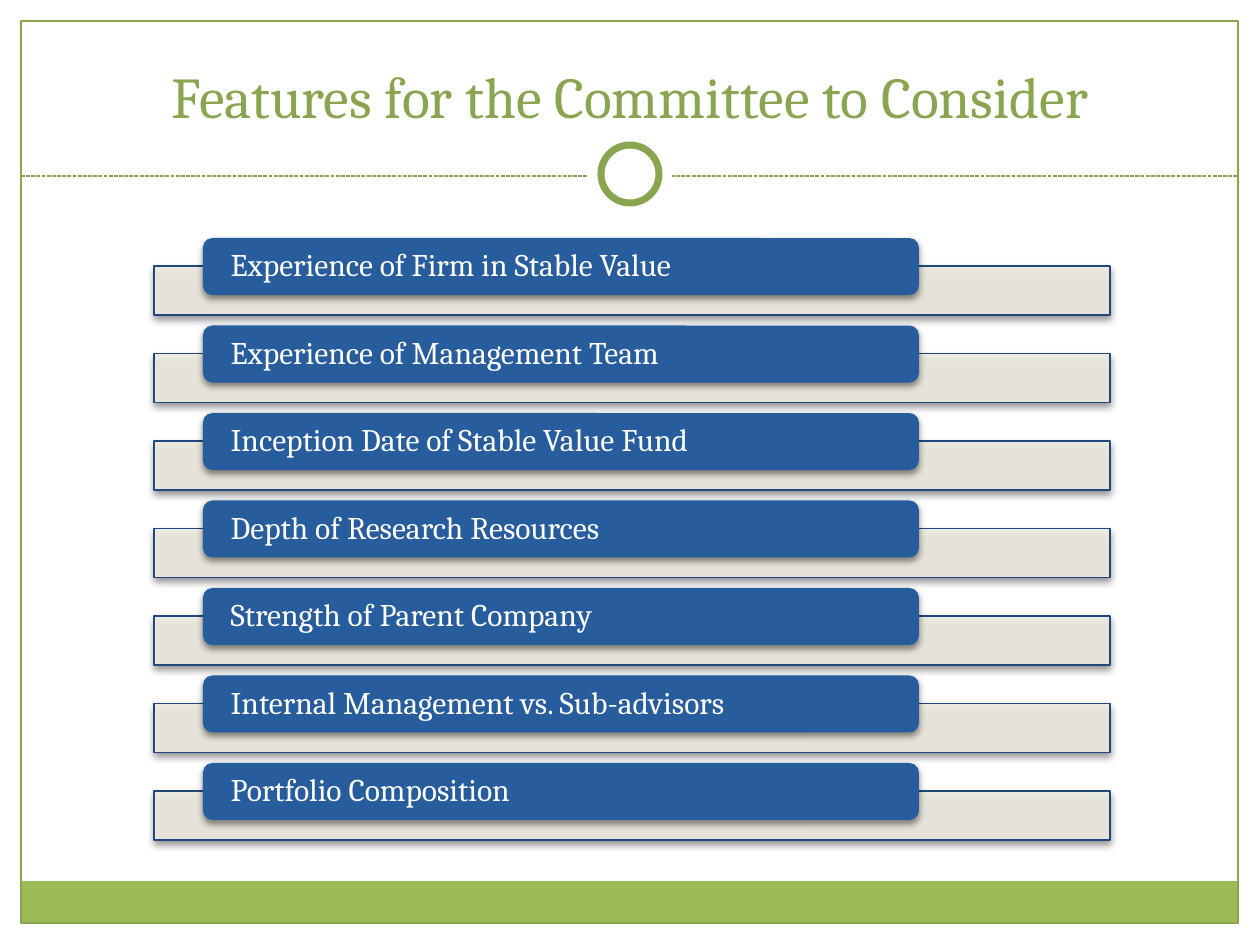
from lxml import etree
from pptx import Presentation, util as u
from pptx.dml.color import RGBColor
from pptx.enum import dml, shapes, text
from pptx.oxml import ns

TITLE = "Features for the Committee to Consider"
FEATURES = [
    "Experience of Firm in Stable Value",
    "Experience of Management Team",
    "Inception Date of Stable Value Fund",
    "Depth of Research Resources",
    "Strength of Parent Company",
    "Internal Management vs. Sub-advisors",
    "Portfolio Composition",
]
COLORS = {
    "white": "FFFFFF", "green": "9BBB59", "dark_green": "89A54F",
    "beige": "EEECE1", "navy": "1F497D", "blue": "275C9D", "black": "000000",
}
FONT = "Cambria"
WIDTH, HEIGHT = 1260, 945
FIRST_TOP, LAST_TOP = 238, 763
BAR_DROP = 28  # each bar starts this far below the top of its label


def px(value):
    return u.Emu(round(value * 914400 / 126))


def color(name):
    return RGBColor.from_string(COLORS[name])


def add_child(parent, tag, **attributes):
    return etree.SubElement(parent, ns.qn(tag), attributes)


def add_box(kind, box, fill=None, line=None, line_width=0.75):
    shape = slide.shapes.add_shape(kind, *map(px, box))
    shape.shadow.inherit = False
    if fill:
        shape.fill.solid()
        shape.fill.fore_color.rgb = color(fill)
    else:
        shape.fill.background()
    if line:
        shape.line.color.rgb = color(line)
        shape.line.width = u.Pt(line_width)
    else:
        shape.line.fill.background()
    return shape


def add_shadow(shape):
    effects = shape._element.spPr.find(ns.qn("a:effectLst"))
    shadow = add_child(effects, "a:outerShdw", blurRad=str(u.Pt(4)), dist=str(u.Pt(2)),
                       dir="5400000", rotWithShape="0")
    shade = add_child(shadow, "a:srgbClr", val=COLORS["black"])
    add_child(shade, "a:alpha", val="45000")


def write(shape, words, size, color_name, align, anchor, side_inset, edge_inset):
    frame = shape.text_frame
    frame.text = words
    frame.word_wrap = True
    frame.vertical_anchor = anchor
    frame.margin_left = frame.margin_right = px(side_inset)
    frame.margin_top = frame.margin_bottom = px(edge_inset)
    paragraph = frame.paragraphs[0]
    paragraph.alignment = align
    font = paragraph.runs[0].font
    font.name, font.size = FONT, u.Pt(size)
    font.color.rgb = color(color_name)
    return paragraph


presentation = Presentation()
presentation.slide_width, presentation.slide_height = px(WIDTH), px(HEIGHT)
slide = presentation.slides.add_slide(presentation.slide_layouts[6])
RECT, OVAL = shapes.MSO_SHAPE.RECTANGLE, shapes.MSO_SHAPE.OVAL

# Footer band and page frame
add_box(RECT, (21, 881, 1217, 43), "green")
add_box(RECT, (21, 21, 1217, 902), line="dark_green")

# Dashed divider with a ring at its centre
divider = slide.shapes.add_connector(
    shapes.MSO_CONNECTOR.STRAIGHT, px(21), px(176), px(1238), px(176))
divider.line.color.rgb = color("dark_green")
divider.line.width = u.Pt(0.75)
divider.line.dash_style = dml.MSO_LINE.SQUARE_DOT
add_child(divider._element.spPr, "a:effectLst")
add_box(OVAL, (588, 132, 84, 84), "white")
add_box(OVAL, (601, 145, 58, 58), "white", "dark_green", 4)

# Title
title = slide.shapes.add_textbox(px(42), px(31), px(1176), px(105))
write(title, TITLE, 33, "dark_green", text.PP_ALIGN.CENTER, text.MSO_ANCHOR.BOTTOM, 12, 6)

# Feature rows: a pale bar with a label overlapping its top edge
pitch = (LAST_TOP - FIRST_TOP) / (len(FEATURES) - 1)
for index, feature in enumerate(FEATURES):
    top = FIRST_TOP + index * pitch
    bar = add_box(RECT, (154, top + BAR_DROP, 956, 49), "beige", "navy")
    bar_color = bar._element.spPr.find(ns.qn("a:solidFill"))[0]
    add_child(bar_color, "a:alpha", val="90000")
    add_shadow(bar)

    label = add_box(shapes.MSO_SHAPE.ROUNDED_RECTANGLE, (203, top, 716, 57), "blue")
    add_shadow(label)
    paragraph = write(label, feature, 18, "white", text.PP_ALIGN.LEFT,
                      text.MSO_ANCHOR.MIDDLE, 25, 0)
    paragraph.line_spacing = 0.9

presentation.save("out.pptx")
